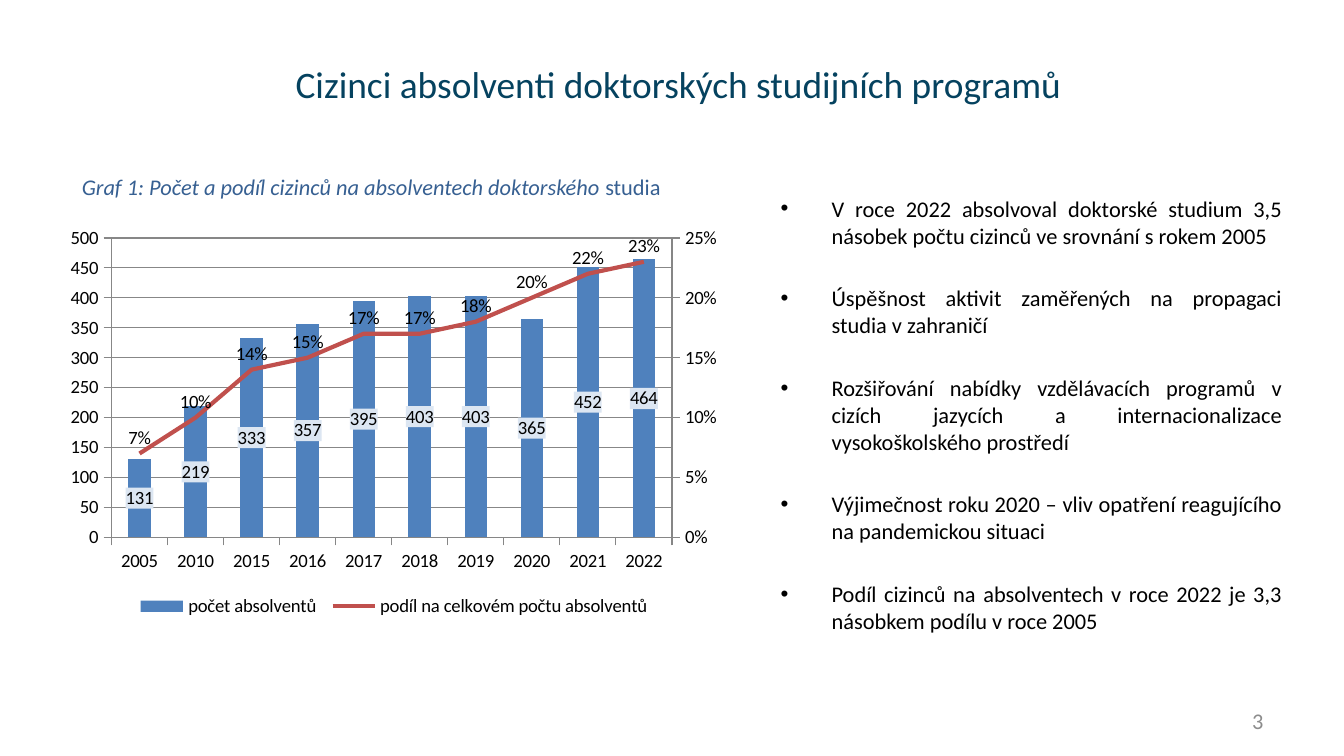
from pptx import Presentation
from pptx.chart.axis import ValueAxis
from pptx.chart.data import CategoryChartData
from pptx.dml.color import RGBColor
from pptx.enum.chart import (XL_CHART_TYPE, XL_LABEL_POSITION, XL_LEGEND_POSITION,
                             XL_MARKER_STYLE, XL_TICK_MARK)
from pptx.enum.text import MSO_ANCHOR, PP_ALIGN
from pptx.oxml import parse_xml
from pptx.util import Inches, Pt

FONT = "Calibri"
BLACK, NAVY, BLUE, GRAY = "000000", "05425F", "376092", "8C8C8C"
BAR_COLOR, LINE_COLOR, LABEL_FILL, AXIS_COLOR = "4F81BD", "C0504D", "DCE6F2", "868686"

TITLE = "Cizinci absolventi doktorských studijních programů "
CAPTION = [("Graf 1: Počet a podíl cizinců na absolventech doktorského ", True),
           ("studia", False)]
BULLETS = [
    "V roce 2022 absolvoval doktorské studium 3,5 násobek počtu cizinců ve srovnání s rokem 2005",
    "Úspěšnost aktivit zaměřených na propagaci studia v zahraničí",
    "Rozšiřování nabídky vzdělávacích programů v cizích jazycích a internacionalizace "
    "vysokoškolského prostředí ",
    "Výjimečnost roku 2020 – vliv opatření reagujícího na pandemickou situaci ",
    "Podíl cizinců na absolventech v roce 2022 je 3,3 násobkem podílu v roce 2005",
]
SLIDE_NUMBER = "3"
YEARS = ["2005", "2010", "2015", "2016", "2017", "2018", "2019", "2020", "2021", "2022"]
COUNT_NAME, SHARE_NAME = "počet absolventů ", "podíl na celkovém počtu absolventů"
COUNTS = [131, 219, 333, 357, 395, 403, 403, 365, 452, 464]
SHARES = [0.07, 0.10, 0.14, 0.15, 0.17, 0.17, 0.18, 0.20, 0.22, 0.23]

CHART_BOX = (0.43, 1.63, 5, 3)
PLOT_BOX = (0.4, 0.14, 4.17, 2.23)  # inches inside the chart

NAMESPACES = ('xmlns:c="http://schemas.openxmlformats.org/drawingml/2006/chart" '
              'xmlns:a="http://schemas.openxmlformats.org/drawingml/2006/main"')
LINE_PLOT = f"""<c:lineChart {NAMESPACES}><c:grouping val="standard"/><c:varyColors val="0"/>
<c:marker val="1"/><c:axId val="5001"/><c:axId val="5002"/></c:lineChart>"""
HIDDEN_AXIS = f"""<c:catAx {NAMESPACES}><c:axId val="5001"/>
<c:scaling><c:orientation val="minMax"/></c:scaling><c:delete val="1"/><c:axPos val="b"/>
<c:crossAx val="5002"/><c:crosses val="autoZero"/></c:catAx>"""
RIGHT_AXIS = f"""<c:valAx {NAMESPACES}><c:axId val="5002"/>
<c:scaling><c:orientation val="minMax"/></c:scaling><c:delete val="0"/><c:axPos val="r"/>
<c:tickLblPos val="nextTo"/><c:crossAx val="5001"/><c:crosses val="max"/>
<c:crossBetween val="between"/></c:valAx>"""
LABEL_BACKGROUND = f"""<c:spPr {NAMESPACES}><a:solidFill>
<a:srgbClr val="{LABEL_FILL}"/></a:solidFill></c:spPr>"""


def rgb(color):
    return RGBColor.from_string(color)


def set_format(target, **values):
    for name, value in values.items():
        setattr(target, name, value)


def set_font(font, size, color, italic=False):
    set_format(font, name=FONT, size=Pt(size), italic=italic)
    font.color.rgb = rgb(color)


def add_text(slide, box, anchor=MSO_ANCHOR.TOP):
    frame = slide.shapes.add_textbox(*map(Inches, box)).text_frame
    set_format(frame, word_wrap=True, vertical_anchor=anchor)
    return frame


def add_run(paragraph, text, size, color, italic=False):
    run = paragraph.add_run()
    run.text = text
    set_font(run.font, size, color, italic)


def add_bullets(slide, box):
    frame = add_text(slide, box)
    for index, text in enumerate(BULLETS):
        paragraph = frame.add_paragraph() if index else frame.paragraphs[0]
        properties = paragraph._p.get_or_add_pPr()
        properties.set("marL", str(Inches(0.38)))
        properties.set("indent", str(-Inches(0.38)))
        properties.append(parse_xml(f'<a:buFont {NAMESPACES} typeface="Arial"/>'))
        properties.append(parse_xml(f'<a:buChar {NAMESPACES} char="•"/>'))
        paragraph.alignment = PP_ALIGN.JUSTIFY
        if index:
            paragraph.space_before = Pt(19.2)
        add_run(paragraph, text, 12, BLACK)


def style_line(line, color, width):
    line.color.rgb = rgb(color)
    line.width = Pt(width)


def style_axis(axis):
    set_format(axis, major_tick_mark=XL_TICK_MARK.OUTSIDE, minor_tick_mark=XL_TICK_MARK.NONE)
    style_line(axis.format.line, AXIS_COLOR, 0.75)


def style_value_axis(axis, maximum, unit, number_format):
    style_axis(axis)
    set_format(axis, minimum_scale=0, maximum_scale=maximum, major_unit=unit)
    set_format(axis.tick_labels, number_format=number_format, number_format_is_linked=False)


def label_series(series, position, number_format):
    labels = series.data_labels
    set_format(labels, show_value=True, position=position,
               number_format=number_format, number_format_is_linked=False)
    set_font(labels.font, 10, BLACK)
    return labels


def move_to_right_axis(chart, series):
    """Turn a column series into a line measured on a second value axis."""
    element = series._element
    for unused in element.xpath("c:invertIfNegative"):
        element.remove(unused)
    line_plot = parse_xml(LINE_PLOT)
    chart.plots[0]._element.addnext(line_plot)
    line_plot.insert(2, element)
    right_axis = parse_xml(RIGHT_AXIS)
    left_axis = chart.value_axis._element
    left_axis.addnext(right_axis)
    left_axis.addnext(parse_xml(HIDDEN_AXIS))
    return ValueAxis(right_axis)


def place_plot(plot_area):
    for layout in plot_area.xpath("c:layout"):
        plot_area.remove(layout)
    sizes = CHART_BOX[2:] * 2
    parts = "".join(f'<c:{name} val="{length / size:.4f}"/>'
                    for name, length, size in zip("xywh", PLOT_BOX, sizes))
    plot_area.insert(0, parse_xml(
        f'<c:layout {NAMESPACES}><c:manualLayout><c:layoutTarget val="inner"/>'
        f'<c:xMode val="edge"/><c:yMode val="edge"/>{parts}</c:manualLayout></c:layout>'))


def add_graduates_chart(slide):
    data = CategoryChartData()
    data.categories = YEARS
    data.add_series(COUNT_NAME, COUNTS, "0")
    data.add_series(SHARE_NAME, SHARES, "0%")
    chart = slide.shapes.add_chart(XL_CHART_TYPE.COLUMN_CLUSTERED,
                                   *map(Inches, CHART_BOX), data).chart
    set_format(chart, has_title=False, has_legend=True)
    set_font(chart.font, 10, BLACK)
    set_format(chart.legend, position=XL_LEGEND_POSITION.BOTTOM, include_in_layout=False)

    columns = chart.plots[0]
    set_format(columns, gap_width=150, vary_by_categories=False)
    counts, shares = columns.series
    counts.format.fill.solid()
    counts.format.fill.fore_color.rgb = rgb(BAR_COLOR)
    labels = label_series(counts, XL_LABEL_POSITION.CENTER, "0")
    labels._element.xpath("c:txPr")[0].addprevious(parse_xml(LABEL_BACKGROUND))

    right_axis = move_to_right_axis(chart, shares)
    shares = chart.plots[1].series[0]
    shares.smooth = False
    shares.marker.style = XL_MARKER_STYLE.NONE
    style_line(shares.format.line, LINE_COLOR, 2.25)
    label_series(shares, XL_LABEL_POSITION.ABOVE, "0%")

    style_axis(chart.category_axis)
    style_value_axis(chart.value_axis, 500, 50, "0")
    style_value_axis(right_axis, 0.25, 0.05, "0%")
    style_line(chart.value_axis.major_gridlines.format.line, AXIS_COLOR, 0.75)
    place_plot(columns._element.getparent())


def main():
    presentation = Presentation()
    width = Inches(10)
    set_format(presentation, slide_width=width, slide_height=width * 9 // 16)
    slide = presentation.slides.add_slide(presentation.slide_layouts[6])

    title = add_text(slide, (1.38, 0.22, 7.4, 0.62), MSO_ANCHOR.BOTTOM).paragraphs[0]
    title.alignment = PP_ALIGN.CENTER
    add_run(title, TITLE, 20, NAVY)

    add_bullets(slide, (5.71, 1.4, 3.93, 3.62))
    caption = add_text(slide, (0.51, 1.24, 4.72, 3.85)).paragraphs[0]
    for text, italic in CAPTION:
        add_run(caption, text, 12, BLUE, italic)

    number = add_text(slide, (7.17, 5.21, 2.33, 0.3), MSO_ANCHOR.MIDDLE).paragraphs[0]
    number.alignment = PP_ALIGN.RIGHT
    add_run(number, SLIDE_NUMBER, 12, GRAY)

    add_graduates_chart(slide)
    presentation.save("out.pptx")


if __name__ == "__main__":
    main()
